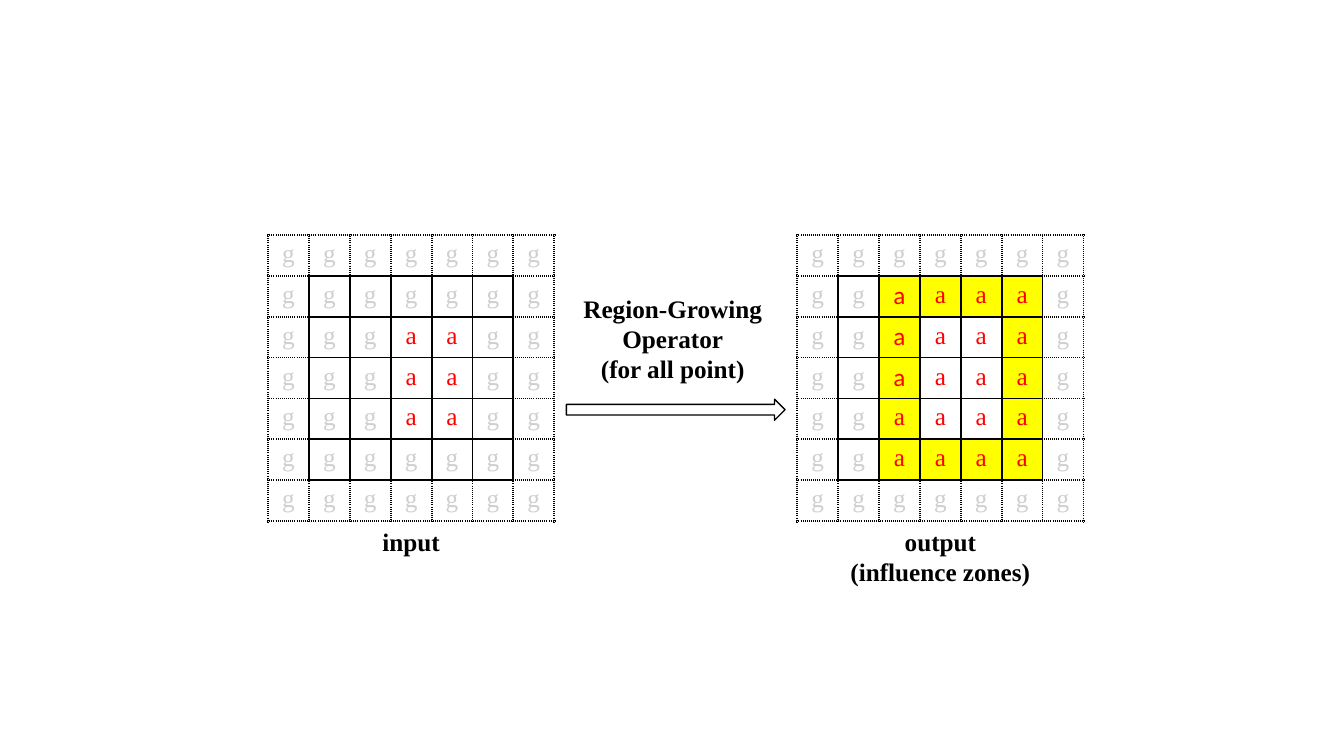
from lxml import etree
from pptx import Presentation
from pptx.dml.color import RGBColor
from pptx.enum import shapes, text
from pptx.oxml import ns
from pptx.util import Pt

BLACK = RGBColor(0, 0, 0)
WHITE = RGBColor(255, 255, 255)
GRAY = RGBColor(0xD0, 0xCE, 0xCE)
RED = RGBColor(255, 0, 0)
YELLOW = RGBColor(255, 255, 0)
SERIF = "Times New Roman"

SIZE = 7
STEP = 29.2
TOP = 167.8
SIDES = {"lnL": (0, -1), "lnR": (0, 1), "lnT": (-1, 0), "lnB": (1, 0)}


def write(para, words, color, bold=False, font=SERIF):
    para.alignment = text.PP_ALIGN.CENTER
    run = para.add_run()
    run.text = words
    run.font.name = font
    run.font.size = Pt(18)
    run.font.bold = bold
    run.font.color.rgb = color


def edge(cell, side, dash):
    line = etree.SubElement(cell._tc.get_or_add_tcPr(), ns.qn("a:" + side), w=str(Pt(1.5)))
    fill = etree.SubElement(line, ns.qn("a:solidFill"))
    etree.SubElement(fill, ns.qn("a:srgbClr"), val=str(BLACK))
    etree.SubElement(line, ns.qn("a:prstDash"), val=dash)


prs = Presentation()
prs.slide_width, prs.slide_height = Pt(960), Pt(540)
slide = prs.slides.add_slide(prs.slide_layouts[6])

inner = range(1, SIZE - 1)
seed = {(row, col) for row in range(2, 5) for col in (3, 4)}
grown = {(row, col) for row in range(1, 6) for col in range(2, 6)}
sans = {(row, 2) for row in (1, 2, 3)}

# Pixel grids: left, marked cells, cells set in Calibri, fill by cell
grids = [
    (191.5, seed, set(), {}),
    (569.5, grown, sans, {spot: YELLOW for spot in grown} | {spot: WHITE for spot in seed}),
]
for left, marked, light, fills in grids:
    frame = slide.shapes.add_table(
        SIZE, SIZE, Pt(left), Pt(TOP), Pt(SIZE * STEP), Pt(SIZE * STEP))
    table = frame.table
    table.first_row = table.horz_banding = False
    for i in range(SIZE):
        table.columns[i].width = table.rows[i].height = Pt(STEP)
    for row in range(SIZE):
        for col in range(SIZE):
            spot = row, col
            cell = table.cell(row, col)
            for side, (down, over) in SIDES.items():
                near = (spot, (row + down, col + over))
                solid = any(r in inner and c in inner for r, c in near)
                edge(cell, side, "solid" if solid else "sysDot")
            if spot in fills:
                cell.fill.solid()
                cell.fill.fore_color.rgb = fills[spot]
            else:
                cell.fill.background()
            hit = spot in marked
            write(cell.text_frame.paragraphs[0], "a" if hit else "g",
                  RED if hit else GRAY, font="Calibri" if spot in light else SERIF)

arrow = slide.shapes.add_shape(
    shapes.MSO_SHAPE.RIGHT_ARROW, Pt(404.6), Pt(285.1), Pt(156.2), Pt(15.1))
arrow.shadow.inherit = False
arrow.fill.solid()
arrow.fill.fore_color.rgb = WHITE
arrow.line.color.rgb = BLACK
arrow.line.width = Pt(1)

# Labels: left, top, width, height, lines
labels = [
    (404.6, 205.9, 152, 72.7, ["Region-Growing", "Operator", "(for all point)"]),
    (191.5, 372.2, 204.4, 29.1, ["input"]),
    (569.5, 372.2, 204.4, 50.9, ["output", "(influence zones)"]),
]
for left, top, width, height, lines in labels:
    box = slide.shapes.add_textbox(Pt(left), Pt(top), Pt(width), Pt(height))
    body = box.text_frame
    body.word_wrap = True
    body.auto_size = text.MSO_AUTO_SIZE.SHAPE_TO_FIT_TEXT
    for i, words in enumerate(lines):
        para = body.add_paragraph() if i else body.paragraphs[0]
        write(para, words, BLACK, bold=True)

prs.save("out.pptx")
